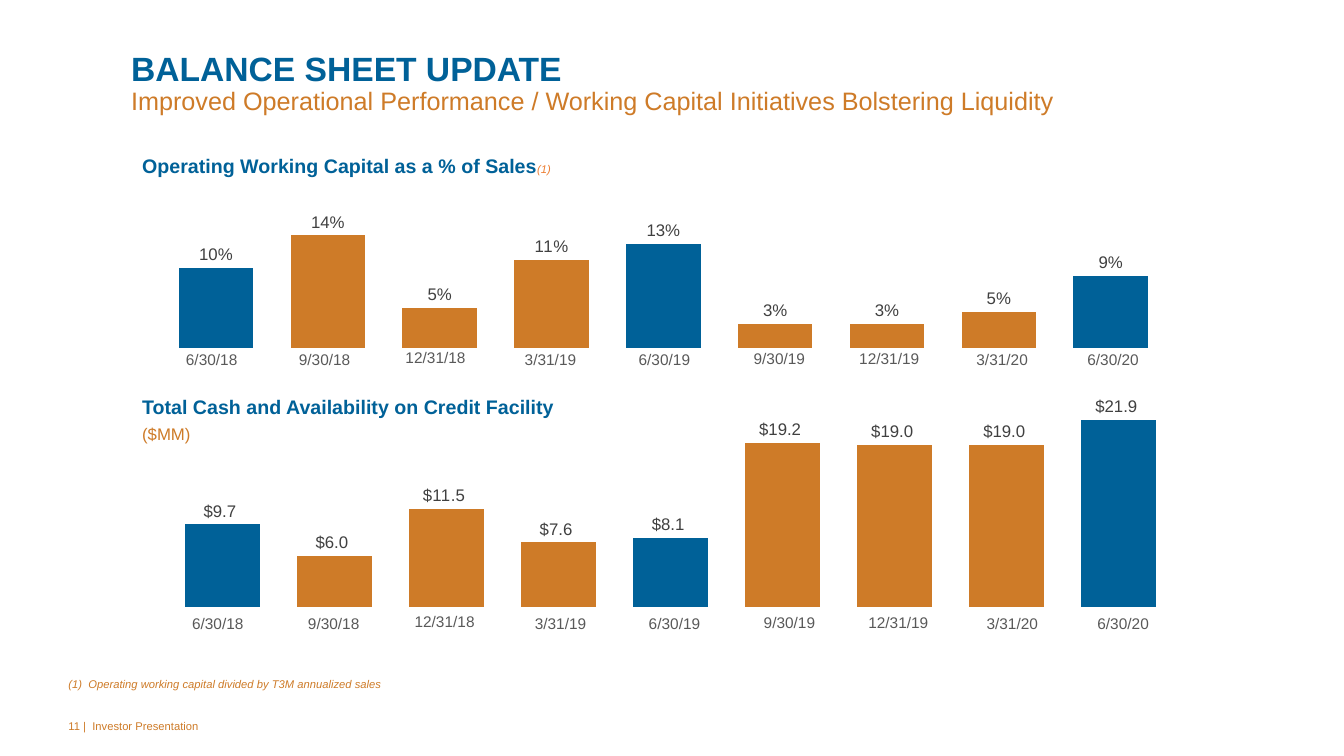
"""Build the balance sheet update slide with two quarterly column charts."""
from lxml import etree
from pptx import Presentation, util as u
from pptx.chart.data import CategoryChartData
from pptx.dml.color import RGBColor
from pptx.enum import chart as charts, shapes, text
from pptx.oxml.ns import qn

BLUE, ORANGE, WHITE = "006198", "CE7B28", "FFFFFF"
THEME = {
    "title": dict(size=24, bold=True, color=BLUE),
    "subtitle": dict(size=18, bold=False, color=ORANGE),
    "heading": dict(size=14, bold=True, color=BLUE),
    "unit": dict(size=12, color=ORANGE),
    "reference": dict(size=8, italic=True, color="ED7D31"),
    "footnote": dict(size=8, italic=True, color=ORANGE),
    "footer": dict(size=8, color=ORANGE),
    "date": dict(size=11, color="595959"),
    "value": dict(size=12, color="404040"),
}


def style(font, role):
    look = dict(THEME[role], name="Arial")
    font.color.rgb = RGBColor.from_string(look.pop("color"))
    look["size"] = u.Pt(look["size"])
    for key, setting in look.items():
        setattr(font, key, setting)


def write(box, lines, frame_format, paragraph_format):
    for key, setting in frame_format.items():
        setattr(box.text_frame, key, setting)
    for index, line in enumerate(lines):
        paragraph = box.text_frame.add_paragraph() if index else box.text_frame.paragraphs[0]
        for key, setting in paragraph_format.items():
            setattr(paragraph, key, setting)
        for words, role in line:
            if words == "\n":
                paragraph.add_line_break()
                continue
            run = paragraph.add_run()
            run.text = words
            style(run.font, role)


deck = Presentation()
deck.slide_width, deck.slide_height = u.Inches(13.33), u.Inches(7.5)
slide = deck.slides.add_slide(deck.slide_layouts[5])

flush = dict(margin_left=0, margin_right=0, margin_top=0, margin_bottom=0,
             word_wrap=True, auto_size=text.MSO_AUTO_SIZE.NONE)
left = dict(alignment=text.PP_ALIGN.LEFT)

title = slide.shapes.title
title.left, title.top, title.width, title.height = map(u.Inches, (1.3, 0.52, 10.81, 0.63))
write(title, [[("BALANCE SHEET UPDATE", "title"), ("\n", "title"),
               ("Improved Operational Performance / Working Capital Initiatives Bolstering Liquidity",
                "subtitle")]],
      dict(flush, vertical_anchor=text.MSO_ANCHOR.BOTTOM), dict(left, line_spacing=0.9))

headings = [
    ((1.41, 3.92, 8.54, 0.48),
     [[("Total Cash and Availability on Credit Facility", "heading")], [("($MM)", "unit")]]),
    ((1.41, 1.53, 6.83, 0.41),
     [[("Operating Working Capital as a % of Sales", "heading"), ("(1)", "reference")]]),
]
for place, lines in headings:
    heading = slide.shapes.add_shape(shapes.MSO_SHAPE.RECTANGLE, *map(u.Inches, place))
    heading.shadow.inherit = False
    heading.fill.solid()
    heading.fill.fore_color.rgb = RGBColor.from_string(WHITE)
    heading.line.fill.background()
    write(heading, lines, dict(flush, vertical_anchor=text.MSO_ANCHOR.TOP),
          dict(left, space_after=u.Pt(3.3)))

notes = [
    ((0.58, 6.59, 11.54, 0.4), "(1)  Operating working capital divided by T3M annualized sales", "footnote"),
    ((0.58, 7, 3, 0.4), "11 |  Investor Presentation", "footer"),
]
for place, words, role in notes:
    write(slide.shapes.add_textbox(*map(u.Inches, place)), [[(words, role)]],
          dict(word_wrap=True, vertical_anchor=text.MSO_ANCHOR.MIDDLE), left)

dates = [("6/30/18", 1.66, 1.72, 0), ("9/30/18", 2.78, 2.87, 0), ("12/31/18", 3.88, 3.97, -0.02),
         ("3/31/19", 5.02, 5.12, 0), ("6/30/19", 6.15, 6.25, 0), ("9/30/19", 7.29, 7.39, -0.01),
         ("12/31/19", 8.38, 8.47, -0.01), ("3/31/20", 9.5, 9.6, 0), ("6/30/20", 10.6, 10.7, 0)]
for date, sales_left, cash_left, nudge in dates:
    for date_left, row_top in ((sales_left, 3.42), (cash_left, 6.04)):
        place = (date_left, row_top + nudge, 0.88, 0.29)
        write(slide.shapes.add_textbox(*map(u.Inches, place)), [[(date, "date")]],
              dict(word_wrap=True), dict(alignment=text.PP_ALIGN.CENTER))

metrics = [
    ((1.44, 3.86, 10.42, 2.21), '"$"#,##0.0_);\\("$"#,##0.0\\)', 25, (0.02, 0.02, 0.96, 0.96),
     (9.7, 6, 11.5, 7.6, 8.1, 19.2, 19, 19, 21.9)),
    ((1.38, 2.12, 10.4, 1.36), "0%", 0.16, (0.02, 0.04, 0.96, 0.94),
     (0.1, 0.14, 0.05, 0.11, 0.13, 0.03, 0.03, 0.045, 0.09)),
]
for place, number_format, maximum, plot_area, values in metrics:
    quarters = CategoryChartData(number_format=number_format)
    quarters.categories = [str(number) for number in range(1, 10)]
    quarters.add_series("Series 1", values)
    chart = slide.shapes.add_chart(charts.XL_CHART_TYPE.COLUMN_CLUSTERED,
                                   *map(u.Inches, place), quarters).chart
    chart.has_title = chart.has_legend = False
    style(chart.font, "value")
    chart.value_axis.minimum_scale, chart.value_axis.maximum_scale = 0, maximum
    chart.value_axis.has_major_gridlines = False
    chart.value_axis.visible = chart.category_axis.visible = False

    plot = chart.plots[0]
    plot.gap_width, plot.overlap, plot.vary_by_categories = 50, -27, False
    plot.has_data_labels = True
    label_format = dict(show_value=True, number_format=number_format, number_format_is_linked=False,
                        position=charts.XL_LABEL_POSITION.OUTSIDE_END)
    for key, setting in label_format.items():
        setattr(plot.data_labels, key, setting)
    style(plot.data_labels.font, "value")

    series = plot.series[0]
    series.format.fill.solid()
    series.format.fill.fore_color.rgb = RGBColor.from_string(ORANGE)
    for june in (0, 4, 8):
        fill = series.points[june].format.fill
        fill.solid()
        fill.fore_color.rgb = RGBColor.from_string(BLUE)

    area = chart.element.find(".//" + qn("c:plotArea"))
    for stale in area.findall(qn("c:layout")):
        area.remove(stale)
    layout = etree.Element(qn("c:layout"))
    area.insert(0, layout)
    manual = etree.SubElement(layout, qn("c:manualLayout"))
    layout_values = dict(layoutTarget="inner", xMode="edge", yMode="edge",
                         **dict(zip("xywh", plot_area)))
    for tag, setting in layout_values.items():
        etree.SubElement(manual, qn("c:" + tag)).set("val", str(setting))

deck.save("out.pptx")
